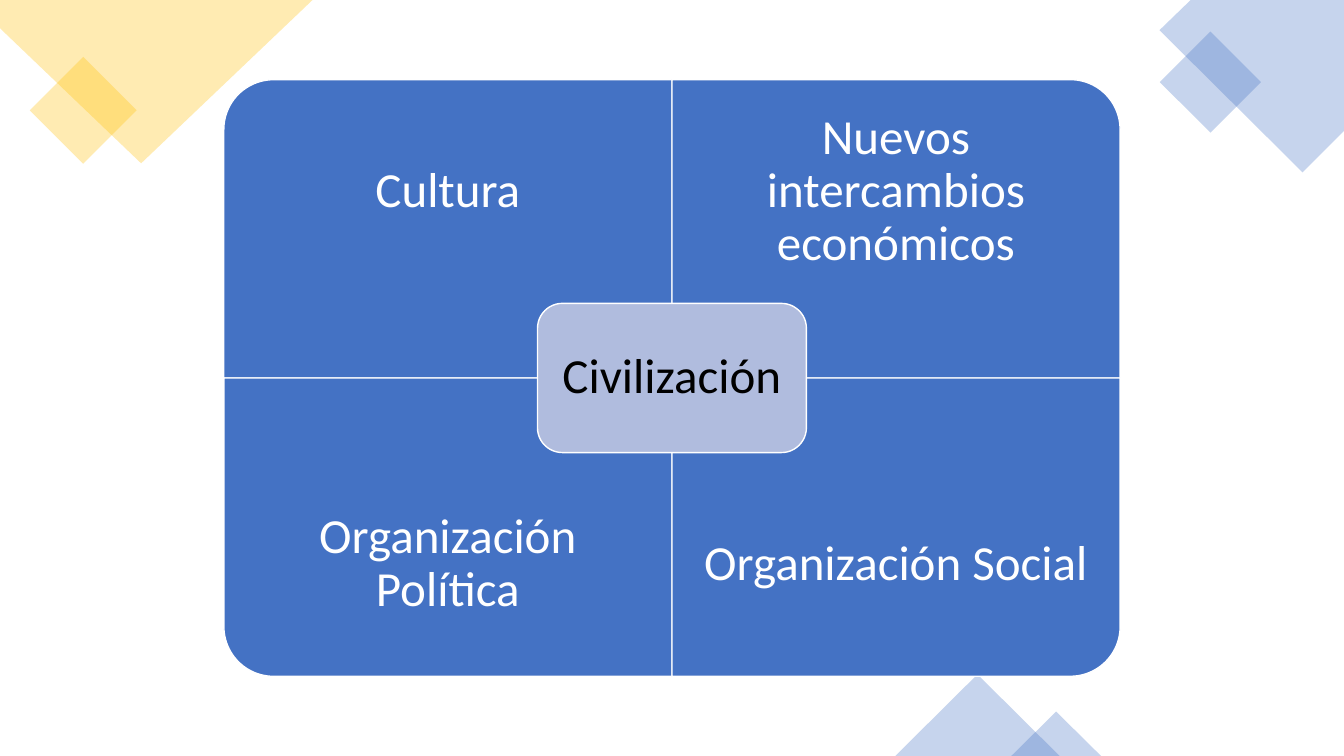
import pptx
import pptx.util
import pptx.dml.color
import pptx.enum.shapes
import pptx.enum.text
import pptx.oxml.ns
import lxml.etree

Inches = pptx.util.Inches
SHAPES = pptx.enum.shapes.MSO_SHAPE
COLOURS = {
    "yellow": "FFC000",
    "blue": "4472C4",
    "pale": "B0BCDE",
    "white": "FFFFFF",
    "black": "000000",
}
FONT = "Calibri"
TEXT_SIZE = 35


def colour(name):
    """Return the named colour as an RGB value."""
    return pptx.dml.color.RGBColor.from_string(COLOURS[name])


def paint(shape, fill, outline=None, opacity=None):
    """Set the fill, outline and opacity of a shape."""
    shape.shadow.inherit = False
    shape.fill.solid()
    shape.fill.fore_color.rgb = colour(fill)
    if outline:
        shape.line.color.rgb = colour(outline)
        shape.line.width = pptx.util.Pt(1)
    else:
        shape.line.fill.background()
    if opacity:
        tint = next(shape.element.iter(pptx.oxml.ns.qn("a:srgbClr")))
        alpha = lxml.etree.SubElement(tint, pptx.oxml.ns.qn("a:alpha"))
        alpha.set("val", str(opacity * 1000))


def add_preset(page, kind, box, rotation=0):
    """Add a preset shape in a box given in inches."""
    shape = page.shapes.add_shape(kind, *map(Inches, box))
    shape.rotation = rotation
    return shape


def write_label(shape, text, ink, inset):
    """Write centred text into a shape."""
    frame = shape.text_frame
    frame.word_wrap = True
    frame.vertical_anchor = pptx.enum.text.MSO_ANCHOR.MIDDLE
    frame.margin_left = frame.margin_right = Inches(inset)
    frame.margin_top = frame.margin_bottom = Inches(inset)
    frame.text = text
    para = frame.paragraphs[0]
    para.alignment = pptx.enum.text.PP_ALIGN.CENTER
    para.line_spacing = 0.9
    span = para.runs[0]
    span.font.name = FONT
    span.font.size = pptx.util.Pt(TEXT_SIZE)
    span.font.color.rgb = colour(ink)


def add_corner(page, box, outline, diamond, fill):
    """Decorate a corner box with a cropped square and a small diamond."""
    left, top = box
    points = [(Inches(left + x), Inches(top + y)) for x, y in outline]
    builder = page.shapes.build_freeform(*points[0])
    builder.add_line_segments(points[1:], close=True)
    paint(builder.convert_to_shape(), fill, opacity=30)
    x, y, side = diamond
    square = add_preset(page, SHAPES.RECTANGLE, (left + x, top + y, side, side), 45)
    paint(square, fill, opacity=30)


def add_peaks(page, box):
    """Stand two overlapping triangles on the bottom of the box."""
    left, top, width, height = box
    for offset, base, rise in ((0, 1.63, 0.81), (width - 0.89, 0.89, 0.44)):
        peak = add_preset(page, SHAPES.ISOSCELES_TRIANGLE,
                          (left + offset, top + height - rise, base, rise))
        paint(peak, "blue", opacity=30)


def add_quarter(page, box, rotation, text, text_top):
    """Add a quarter whose rounded corner is turned outwards, with its label."""
    left, top, width, height = box
    sideways = rotation % 180 != 0
    across, down = (height, width) if sideways else (width, height)
    panel_box = (left + (width - across) / 2, top + (height - down) / 2, across, down)
    panel = add_preset(page, SHAPES.ROUND_1_RECTANGLE, panel_box, rotation)
    paint(panel, "blue", "white")
    label = page.shapes.add_textbox(
        *map(Inches, (left, text_top, width, height * 0.75)))
    write_label(label, text, "white", 0.27)


def add_matrix(page, box, centre, quarters):
    """Fill the box with four quarters around a central title."""
    left, top, width, height = box
    half_width, half_height = width / 2, height / 2
    for index, (text, rotation) in enumerate(quarters):
        row, column = divmod(index, 2)
        quarter_top = top + row * half_height
        add_quarter(page,
                    (left + column * half_width, quarter_top, half_width, half_height),
                    rotation, text, quarter_top + row * half_height / 4)
    core_width, core_height = width * 0.3, height / 4
    core = add_preset(page, SHAPES.ROUNDED_RECTANGLE,
                      (left + (width - core_width) / 2,
                       top + (height - core_height) / 2, core_width, core_height))
    paint(core, "pale", "white")
    write_label(core, centre, "black", 0.12)


def main():
    """Build the slide and save it."""
    deck = pptx.Presentation()
    deck.slide_width, deck.slide_height = Inches(13.33), Inches(7.5)
    page = deck.slides.add_slide(deck.slide_layouts[6])
    add_corner(page, (0, 0), [(0, 0), (3.1, 0), (1.4, 1.62), (0, 0.28)],
               (0.45, 0.72, 0.75), "yellow")
    add_corner(page, (11.5, 0),
               [(0.31, 0), (1.83, 0), (1.83, 1.3), (1.42, 1.71), (0, 0.3)],
               (0.15, 0.46, 0.71), "blue")
    add_peaks(page, (8.88, 6.69, 2.04, 0.81))
    add_matrix(page, (2.22, 0.79, 8.89, 5.92), "Civilización", [
        ("Cultura", 270),
        ("Nuevos intercambios económicos", 0),
        ("Organización Política", 180),
        ("Organización Social", 90),
    ])
    deck.save("out.pptx")


if __name__ == "__main__":
    main()
